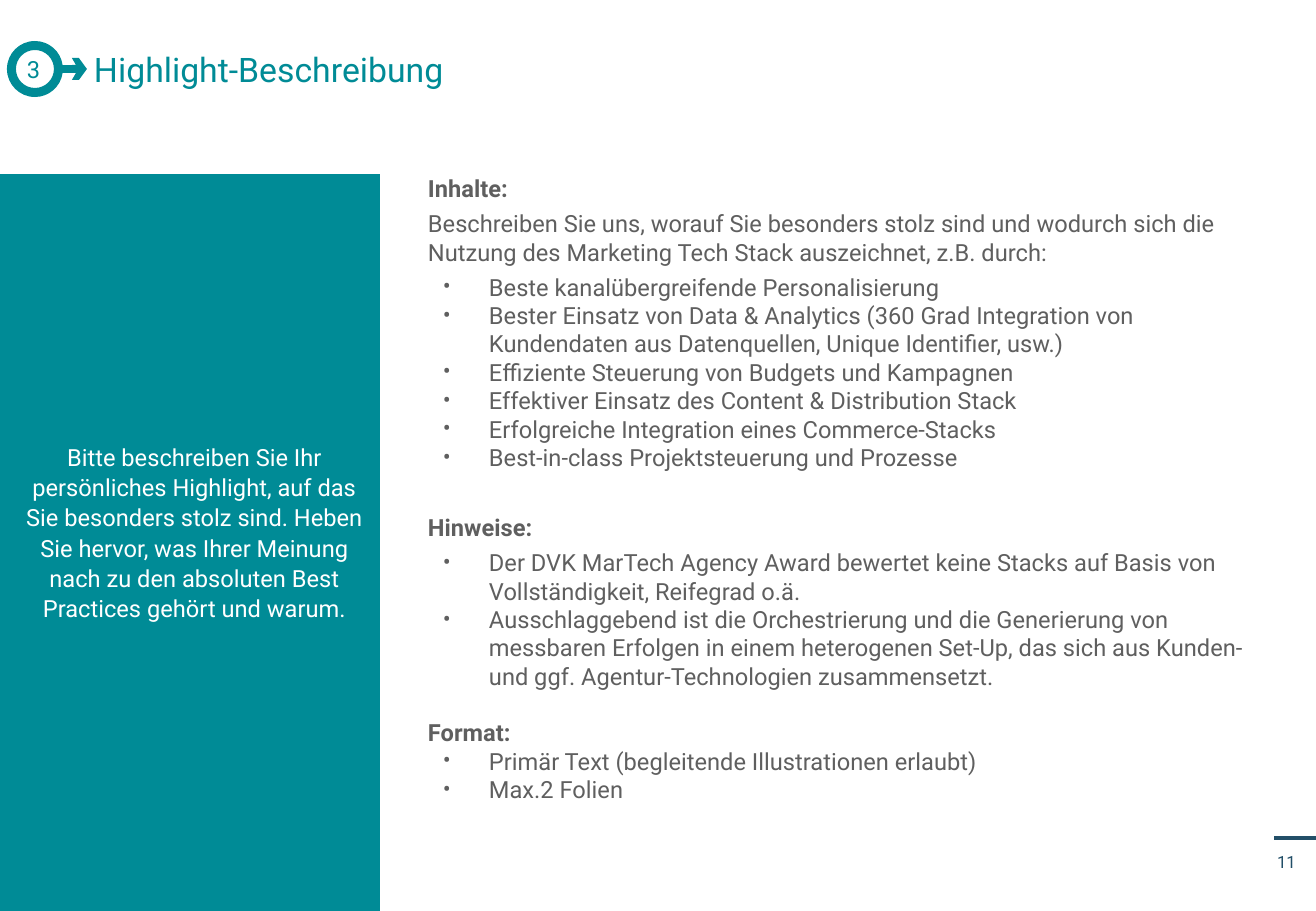
"""Builds the slide that explains the highlight description."""
import math

from lxml import etree
from pptx import Presentation
from pptx import util as u
from pptx.dml.color import RGBColor
from pptx.enum import shapes, text
from pptx.oxml.ns import qn

PX = u.Inches(1) / 121.5
FONT = "Roboto"
TEAL, GREY, NAVY, WHITE = "008B96", "5F5F5F", "224F68", "FFFFFF"
CENTER = text.PP_ALIGN.CENTER
MIDDLE = text.MSO_ANCHOR.MIDDLE

INTRO = ("Bitte beschreiben Sie Ihr persönliches Highlight, auf das Sie besonders stolz sind. "
         "Heben Sie hervor, was Ihrer Meinung nach zu den absoluten Best Practices gehört und warum.")
SECTIONS = [
    ("Inhalte:", 0, 4,
     "Beschreiben Sie uns, worauf Sie besonders stolz sind und wodurch sich die Nutzung "
     "des Marketing Tech Stack auszeichnet, z.B. durch:",
     ["Beste kanalübergreifende Personalisierung",
      "Bester Einsatz von Data & Analytics (360 Grad Integration von Kundendaten "
      "aus Datenquellen, Unique Identifier, usw.)",
      "Effiziente Steuerung von Budgets und Kampagnen",
      "Effektiver Einsatz des Content & Distribution Stack",
      "Erfolgreiche Integration eines Commerce-Stacks",
      "Best-in-class Projektsteuerung und Prozesse"]),
    ("Hinweise:", 24.8, 4, None,
     ["Der DVK MarTech Agency Award bewertet keine Stacks auf Basis von "
      "Vollständigkeit, Reifegrad o.ä.",
      "Ausschlaggebend ist die Orchestrierung und die Generierung von messbaren Erfolgen "
      "in einem heterogenen Set-Up, das sich aus Kunden- und ggf. "
      "Agentur-Technologien zusammensetzt."]),
    ("Format:", 16.8, 0, None,
     ["Primär Text (begleitende Illustrationen erlaubt)", "Max.2 Folien"]),
]


def color(code):
    """Turn a hex string into a colour."""
    return RGBColor.from_string(code)


def place(*lengths):
    """Turn px lengths into EMU."""
    return [round(length * PX) for length in lengths]


def set_frame(shape, insets=(0, 0, 0, 0), anchor=text.MSO_ANCHOR.TOP):
    """Set wrapping, insets and anchor of a shape's text."""
    frame = shape.text_frame
    frame.word_wrap = True
    frame.vertical_anchor = anchor
    (frame.margin_left, frame.margin_top,
     frame.margin_right, frame.margin_bottom) = place(*insets)
    return frame


def add_bullet(para, code):
    """Give a paragraph a hanging coloured bullet."""
    props = para._p.get_or_add_pPr()
    left, indent = place(61, -46)
    props.set("marL", str(left))
    props.set("indent", str(indent))
    tint = etree.SubElement(props, qn("a:buClr"))
    etree.SubElement(tint, qn("a:srgbClr"), val=code)
    etree.SubElement(props, qn("a:buFont"), typeface=FONT)
    etree.SubElement(props, qn("a:buChar"), char="•")


def write(frame, words, size=14, ink=GREY, bold=False, align=None,
          before=0, spacing=None, bullet=False):
    """Add a formatted paragraph to a frame, filling the empty first one."""
    para = frame.paragraphs[0]
    if para.runs:
        para = frame.add_paragraph()
    if bullet:
        add_bullet(para, ink)
    if align is not None:
        para.alignment = align
    if before:
        para.space_before = u.Pt(before)
    if spacing:
        para.line_spacing = spacing
    span = para.add_run()
    span.text = words
    span.font.name = FONT
    span.font.size = u.Pt(size)
    span.font.bold = bold
    span.font.color.rgb = color(ink)


def paint(shape, code):
    """Fill a shape and take away its line and shadow."""
    shape.shadow.inherit = False
    shape.fill.solid()
    shape.fill.fore_color.rgb = color(code)
    shape.line.fill.background()


def on_circle(center, radius, angle, lean=0):
    """Return the EMU point at an angle, moved along the tangent by lean radii."""
    turn = math.radians(angle)
    return place(center[0] + radius * (math.cos(turn) - lean * math.sin(turn)),
                 center[1] + radius * (math.sin(turn) + lean * math.cos(turn)))


def bend(shape, lines, center, radius, angles):
    """Turn straight path segments into arcs between successive angles."""
    for line, start, end in zip(lines, angles, angles[1:]):
        lean = 4 / 3 * math.tan(math.radians(end - start) / 4)
        curve = etree.Element(qn("a:cubicBezTo"))
        for x, y in (on_circle(center, radius, start, lean),
                     on_circle(center, radius, end, -lean),
                     on_circle(center, radius, end)):
            etree.SubElement(curve, qn("a:pt"), x=str(x - shape.left), y=str(y - shape.top))
        line.getparent().replace(line, curve)


def add_badge(page, number):
    """Draw the ring with an arrow and its number."""
    center, outside, inside = (35, 69), 28, 19
    outer, inner = [8, 90, 180, 270, 352], [360, 270, 180, 90, 0]
    head = [(41, -4), (37, -11), (44, -11), (52, 0), (44, 11), (37, 11), (41, 4)]
    rim = [on_circle(center, outside, angle) for angle in outer]
    rim += [place(center[0] + x, center[1] + y) for x, y in head]
    hole = [on_circle(center, inside, angle) for angle in inner]
    builder = page.shapes.build_freeform(*rim[0])
    builder.add_line_segments(rim[1:], close=True)
    builder.move_to(*hole[0])
    builder.add_line_segments(hole[1:], close=True)
    badge = builder.convert_to_shape()
    lines = list(badge._element.iter(qn("a:lnTo")))
    bend(badge, lines[:4], center, outside, outer)
    bend(badge, lines[len(rim) - 1:][:4], center, inside, inner)
    paint(badge, TEAL)
    write(set_frame(badge, (0, 6, 27, 6), MIDDLE), number, ink=TEAL, align=CENTER)


def add_panel(page):
    """Draw the coloured panel with the introduction."""
    panel = page.shapes.add_shape(shapes.MSO_SHAPE.RECTANGLE, *place(0, 174, 380, 737))
    paint(panel, TEAL)
    write(set_frame(panel, (14, 14, 5, 36), MIDDLE), INTRO,
          ink=WHITE, align=CENTER, spacing=1.07)


def add_sections(page):
    """Write the headed sections and their bullets."""
    frame = set_frame(page.shapes.add_textbox(*place(428, 174, 819, 662)))
    for heading, gap, lead, body, points in SECTIONS:
        write(frame, heading, bold=True, before=gap)
        if body:
            write(frame, body, before=lead)
        for index, point in enumerate(points):
            write(frame, point, before=0 if index else lead, bullet=True)


def add_page_number(page, number):
    """Draw the page number under its rule."""
    rule = page.shapes.add_connector(shapes.MSO_CONNECTOR.STRAIGHT,
                                     *place(1274, 838, 1316, 838))
    rule.line.color.rgb = color(NAVY)
    rule.line.width = u.Pt(2.75)
    etree.SubElement(rule._element.spPr, qn("a:effectLst"))
    box = page.shapes.add_textbox(*place(1277, 837, 36, 53))
    write(set_frame(box, (0, 6, 0, 6), MIDDLE), number, size=10, ink=NAVY, spacing=0.9)


def main():
    """Build and save the deck."""
    deck = Presentation()
    deck.slide_width, deck.slide_height = place(1316, 911)
    page = deck.slides.add_slide(deck.slide_layouts[6])
    add_page_number(page, "11")
    add_sections(page)
    title = page.shapes.add_textbox(*place(94, 49, 925, 43))
    write(set_frame(title), "Highlight-Beschreibung", size=20, ink=TEAL)
    add_badge(page, "3")
    add_panel(page)
    deck.save("out.pptx")


if __name__ == "__main__":
    main()
